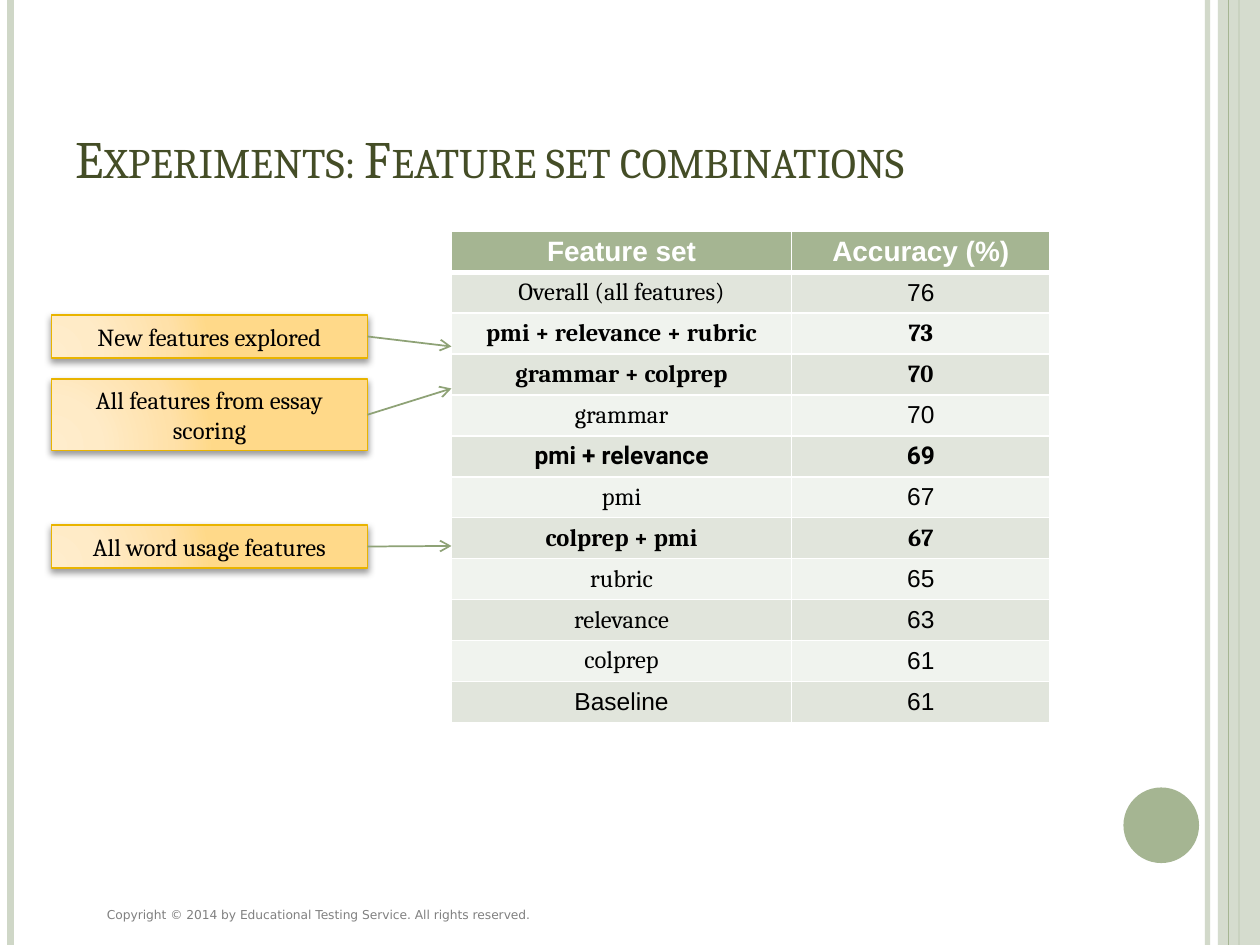
"""Build the feature set combinations slide on a grid of twelfths of an inch."""
from pptx import Presentation, oxml, util as u
from pptx.dml.color import RGBColor
from pptx.enum import shapes, text
from pptx.oxml import ns

GRID = 12
WIDTH, HEIGHT = 10 * GRID, 7.5 * GRID
C = {
    "sage": "A5B592", "pale": "CFD7C7", "arrow": "8EA276", "title": "444D26",
    "grey": "808080", "black": "000000", "white": "FFFFFF", "gold": "E9B400",
    "odd": "E1E5DC", "even": "F0F3EE",
}
GLOW = [(0, "FFEDCC"), (30, "FFEBC7"), (75, "FFE1A9"), (100, "FFD989")]
TABLE_LEFT, TABLE_TOP, ROW_HEIGHT = 43, 22, 3.9
COLUMNS = (32.4, 24.6)
HEADER = ("Feature set", "Accuracy (%)")
RESULTS = [
    ("Overall (all features)", "76", "Cambria", False),
    ("pmi + relevance + rubric", "73", "Cambria", True),
    ("grammar + colprep", "70", "Cambria", True),
    ("grammar", "70", "Cambria", False),
    ("pmi + relevance", "69", "Roboto", True),
    ("pmi", "67", "Cambria", False),
    ("colprep + pmi", "67", "Cambria", True),
    ("rubric", "65", "Cambria", False),
    ("relevance", "63", "Cambria", False),
    ("colprep", "61", "Cambria", False),
    ("Baseline", "61", "Arial", False),
]
CALLOUTS = [
    ("New features explored", 30, 4.1, 33),
    ("All features from essay scoring", 36.1, 6.8, 37),
    ("All word usage features", 50, 4.1, 52),
]


def g(n):
    """Turn grid units into a length."""
    return u.Inches(n / GRID)


def rgb(name):
    """Look up a colour."""
    return RGBColor.from_string(C[name])


def xml(tag, attrs="", inner=""):
    """Make a DrawingML element."""
    return oxml.parse_xml(f'<a:{tag} {ns.nsdecls("a")} {attrs}>{inner}</a:{tag}>')


def solid(color):
    """Give the markup of a solid fill."""
    return f'<a:solidFill><a:srgbClr val="{C[color]}"/></a:solidFill>'


def set_alpha(sp, percent):
    """Make the solid colours of a shape partly transparent."""
    for clr in sp._element.spPr.xpath(".//a:solidFill/a:srgbClr"):
        clr.append(xml("alpha", f'val="{percent * 1000}"'))


def write(tf, content, color, align=text.PP_ALIGN.LEFT, **font):
    """Put one formatted paragraph in a text frame."""
    p = tf.paragraphs[0]
    p.alignment = align
    r = p.add_run()
    r.text = content
    r.font.color.rgb = rgb(color)
    for key, value in font.items():
        setattr(r.font, key, value)
    return r


def add_line(s, start, end, color, weight):
    """Draw a straight line between two grid points."""
    ln = s.shapes.add_connector(
        shapes.MSO_CONNECTOR.STRAIGHT, *map(g, start + end))
    ln.line.color.rgb = rgb(color)
    ln.line.width = u.Pt(weight)
    ln._element.spPr.append(xml("effectLst"))
    return ln


def add_plain(s, kind, box, color):
    """Draw a filled shape without outline or shadow."""
    sp = s.shapes.add_shape(kind, *map(g, box))
    sp.shadow.inherit = False
    sp.fill.solid()
    sp.fill.fore_color.rgb = rgb(color)
    sp.line.fill.background()
    return sp


def add_frame(s):
    """Draw the side bars, the circle and the copyright line."""
    def bar(x, color, weight):
        return add_line(s, (x, 0), (x, HEIGHT), color, weight)

    set_alpha(bar(115, "pale", 3), 93)
    bar(1, "pale", 4.5)
    bar(118, "sage", 1.5)
    band = add_plain(s, shapes.MSO_SHAPE.RECTANGLE, (116, 0, 4, HEIGHT), "pale")
    set_alpha(band, 87)
    bar(117, "sage", 0.75)
    add_plain(s, shapes.MSO_SHAPE.OVAL, (107, 75, 7.2, 7.2), "sage")
    tf = s.shapes.add_textbox(*map(g, (9, 85.8, 75, 2.6))).text_frame
    tf.word_wrap = True
    write(tf, "Copyright © 2014 by Educational Testing Service. All rights reserved.",
          "grey", size=u.Pt(7), name="DejaVu Sans")


def add_title(s, content):
    """Fill and place the title placeholder."""
    sp = s.shapes.title
    for key, value in zip(("left", "top", "width", "height"), (6, 3.6, 98, 15)):
        setattr(sp, key, g(value))
    tf = sp.text_frame
    tf.auto_size = text.MSO_AUTO_SIZE.NONE
    tf.vertical_anchor = text.MSO_ANCHOR.BOTTOM
    r = write(tf, content, "title", size=u.Pt(30), name="Cambria")
    r.font._element.set("cap", "small")


def format_cell(cell, content, fill, color, bottom=1, **font):
    """Fill one table cell and give it white borders."""
    cell.fill.solid()
    cell.fill.fore_color.rgb = rgb(fill)
    cell.margin_top = cell.margin_bottom = u.Inches(0.03)
    cell.vertical_anchor = text.MSO_ANCHOR.MIDDLE
    write(cell.text_frame, content, color, text.PP_ALIGN.CENTER, **font)
    borders = {"lnL": 1, "lnR": 1, "lnT": 1, "lnB": bottom}
    for i, (tag, weight) in enumerate(borders.items()):
        ln = xml(tag, f'w="{u.Pt(weight)}"', solid("white"))
        cell._tc.get_or_add_tcPr().insert(i, ln)


def add_results(s):
    """Add the table of accuracies."""
    rows = len(RESULTS) + 1
    box = (TABLE_LEFT, TABLE_TOP, sum(COLUMNS), rows * ROW_HEIGHT)
    table = s.shapes.add_table(rows, len(COLUMNS), *map(g, box)).table
    for col, width in zip(table.columns, COLUMNS):
        col.width = g(width)
    for row in table.rows:
        row.height = g(ROW_HEIGHT)
    for j, label in enumerate(HEADER):
        format_cell(table.cell(0, j), label, "sage", "white", bottom=3,
                    size=u.Pt(16), name="Arial", bold=True)
    for i, (label, accuracy, face, bold) in enumerate(RESULTS, 1):
        fill = "odd" if i % 2 else "even"
        pairs = ((label, face), (accuracy, face if bold else "Arial"))
        for j, (content, name) in enumerate(pairs):
            format_cell(table.cell(i, j), content, fill, "black",
                        bottom=3 if i == 0 else 1,
                        size=u.Pt(14), name=name, bold=bold)


def add_callout(s, label, top, height, target):
    """Add a glowing label with an arrow to the table."""
    sp = s.shapes.add_shape(
        shapes.MSO_SHAPE.RECTANGLE, *map(g, (4.9, top, 30.1, height)))
    sp.line.color.rgb = rgb("gold")
    sp.line.width = u.Pt(1)
    sp.shadow.inherit = False
    sp.fill.gradient()
    spPr = sp._element.spPr
    stops = "".join(f'<a:gs pos="{pos * 1000}"><a:srgbClr val="{clr}"/></a:gs>'
                    for pos, clr in GLOW)
    spPr.replace(spPr.find(ns.qn("a:gradFill")), xml(
        "gradFill", 'rotWithShape="1"',
        f'<a:gsLst>{stops}</a:gsLst><a:path path="circle"><a:fillToRect '
        'l="5000" t="100000" r="120000" b="10000"/></a:path>'))
    spPr.find(ns.qn("a:effectLst")).append(xml(
        "outerShdw",
        f'blurRad="{u.Pt(4)}" dist="{u.Pt(2)}" dir="5400000" rotWithShape="0"',
        f'<a:srgbClr val="{C["black"]}"><a:alpha val="40000"/></a:srgbClr>'))
    tf = sp.text_frame
    tf.word_wrap = True
    tf.vertical_anchor = text.MSO_ANCHOR.MIDDLE
    write(tf, label, "black", text.PP_ALIGN.CENTER, size=u.Pt(14), name="Cambria")
    ln = add_line(s, (35, top + height / 2), (TABLE_LEFT, target), "arrow", 1)
    ln.begin_connect(sp, 3)
    ln.line._get_or_add_ln().append(xml("tailEnd", 'type="arrow"'))


def main():
    """Build and save the slide."""
    prs = Presentation()
    prs.slide_width, prs.slide_height = g(WIDTH), g(HEIGHT)
    s = prs.slides.add_slide(prs.slide_layouts[5])
    add_frame(s)
    add_title(s, "Experiments: Feature set combinations")
    add_results(s)
    for callout in CALLOUTS:
        add_callout(s, *callout)
    prs.save("out.pptx")


if __name__ == "__main__":
    main()
